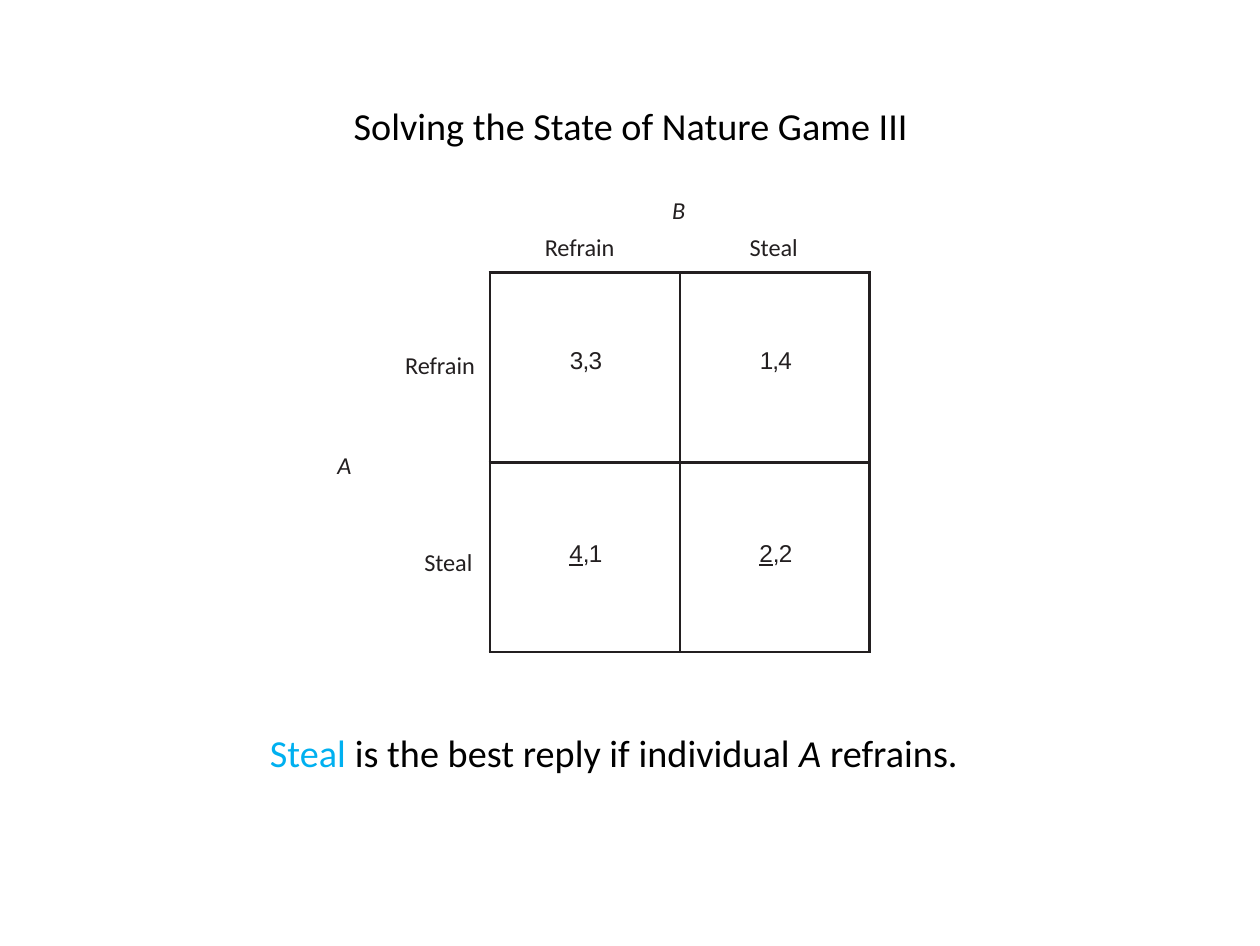
"""Build a slide that marks best replies in a two-by-two payoff matrix."""
from dataclasses import dataclass

from lxml.etree import SubElement
from pptx import Presentation
from pptx.dml.color import RGBColor
from pptx.enum.text import MSO_ANCHOR as Anchor, MSO_AUTO_SIZE as AutoSize, PP_ALIGN as Align
from pptx.oxml.ns import qn
from pptx.util import Inches, Pt

INK = "231F20"
BLACK = "000000"
HIGHLIGHT = "00B0F0"
CELL_SIZE = 0.76
LABEL_HEIGHT = 0.13


@dataclass
class Span:
    text: str
    color: str | None = None
    italic: bool | None = None
    underline: bool | None = None


@dataclass
class Label:
    text: str
    left: float
    top: float
    width: float
    italic: bool = False
    align: Align = Align.LEFT


LABELS = [
    Label("B", 2.69, 0.76, 0.1, italic=True),
    Label("Refrain", 2.18, 0.91, 0.35),
    Label("Steal", 3, 0.91, 0.26),
    Label("Refrain", 1.5, 1.38, 0.4, align=Align.RIGHT),
    Label("A", 1.35, 1.78, 0.1, italic=True),
    Label("Steal", 1.5, 2.17, 0.39, align=Align.RIGHT),
]

PAYOFFS = [
    [[Span("3,3")], [Span("1,4")]],
    [[Span("4", underline=True), Span(",1")], [Span("2", underline=True), Span(",2")]],
]
LIFTS = [0.05, 0.03]

STATEMENT = [
    Span("Steal ", HIGHLIGHT),
    Span("is the best reply if individual "),
    Span("A ", italic=True),
    Span("refrains."),
]


def rgb(color: str) -> RGBColor:
    return RGBColor.from_string(color)


def write(frame, spans: list[Span], size: float, color: str,
          font: str = "Calibri", align: Align = Align.LEFT) -> None:
    para = frame.paragraphs[0]
    para.alignment = align
    para.font.name = font
    para.font.size = Pt(size)
    para.font.color.rgb = rgb(color)
    for span in spans:
        run = para.add_run()
        run.text = span.text
        run.font.italic = span.italic
        run.font.underline = span.underline
        run.font.name = font
        run.font.size = Pt(size)
        run.font.color.rgb = rgb(span.color or color)


def place(box, left: float, top: float, width: float, height: float) -> None:
    box.left, box.top = Inches(left), Inches(top)
    box.width, box.height = Inches(width), Inches(height)
    frame = box.text_frame
    frame.word_wrap = True
    frame.auto_size = AutoSize.NONE
    frame.vertical_anchor = Anchor.TOP
    frame.margin_left = frame.margin_right = frame.margin_bottom = 0
    frame.margin_top = Inches(0.02)


def add_text(page, left: float, top: float, width: float, height: float):
    box = page.shapes.add_textbox(0, 0, 0, 0)
    place(box, left, top, width, height)
    return box.text_frame


def add_borders(cell, color: str, width: float) -> None:
    properties = cell._tc.get_or_add_tcPr()
    for position, side in enumerate(("lnL", "lnR", "lnT", "lnB")):
        line = SubElement(properties, qn(f"a:{side}"), w=str(Pt(width)))
        fill = SubElement(line, qn("a:solidFill"))
        SubElement(fill, qn("a:srgbClr"), val=color)
        properties.insert(position, line)


def tighten(cell, spacing: float) -> None:
    for run in cell.text_frame.paragraphs[0].runs:
        run._r.get_or_add_rPr().set("spc", str(round(100 * spacing)))


def add_matrix(page, left: float, top: float) -> None:
    side = Inches(2 * CELL_SIZE)
    table = page.shapes.add_table(2, 2, Inches(left), Inches(top), side, side).table
    table.first_row = table.horz_banding = False
    for row, (payoffs, lift) in enumerate(zip(PAYOFFS, LIFTS)):
        for column, spans in enumerate(payoffs):
            cell = table.cell(row, column)
            cell.fill.background()
            cell.vertical_anchor = Anchor.MIDDLE
            cell.margin_left = Inches(0.01)
            cell.margin_right = cell.margin_top = 0
            cell.margin_bottom = Inches(lift)
            write(cell.text_frame, spans, 7, INK, "Arial", Align.CENTER)
            tighten(cell, -0.2)
            add_borders(cell, INK, 0.75)


def main() -> None:
    deck = Presentation()
    deck.slide_width = Pt(363)
    deck.slide_height = Pt(272.5)
    page = deck.slides.add_slide(deck.slide_layouts[5])

    title = page.shapes.title
    place(title, 1.34, 0.39, 2.37, 0.2)
    write(title.text_frame, [Span("Solving the State of Nature Game III")],
          11, BLACK, align=Align.CENTER)

    for label in LABELS:
        frame = add_text(page, label.left, label.top, label.width, LABEL_HEIGHT)
        write(frame, [Span(label.text, italic=label.italic)], 7, INK, align=label.align)

    add_matrix(page, 1.96, 1.09)
    write(add_text(page, 1.08, 2.9, 2.91, 0.2), STATEMENT, 11, BLACK)
    deck.save("out.pptx")


if __name__ == "__main__":
    main()
